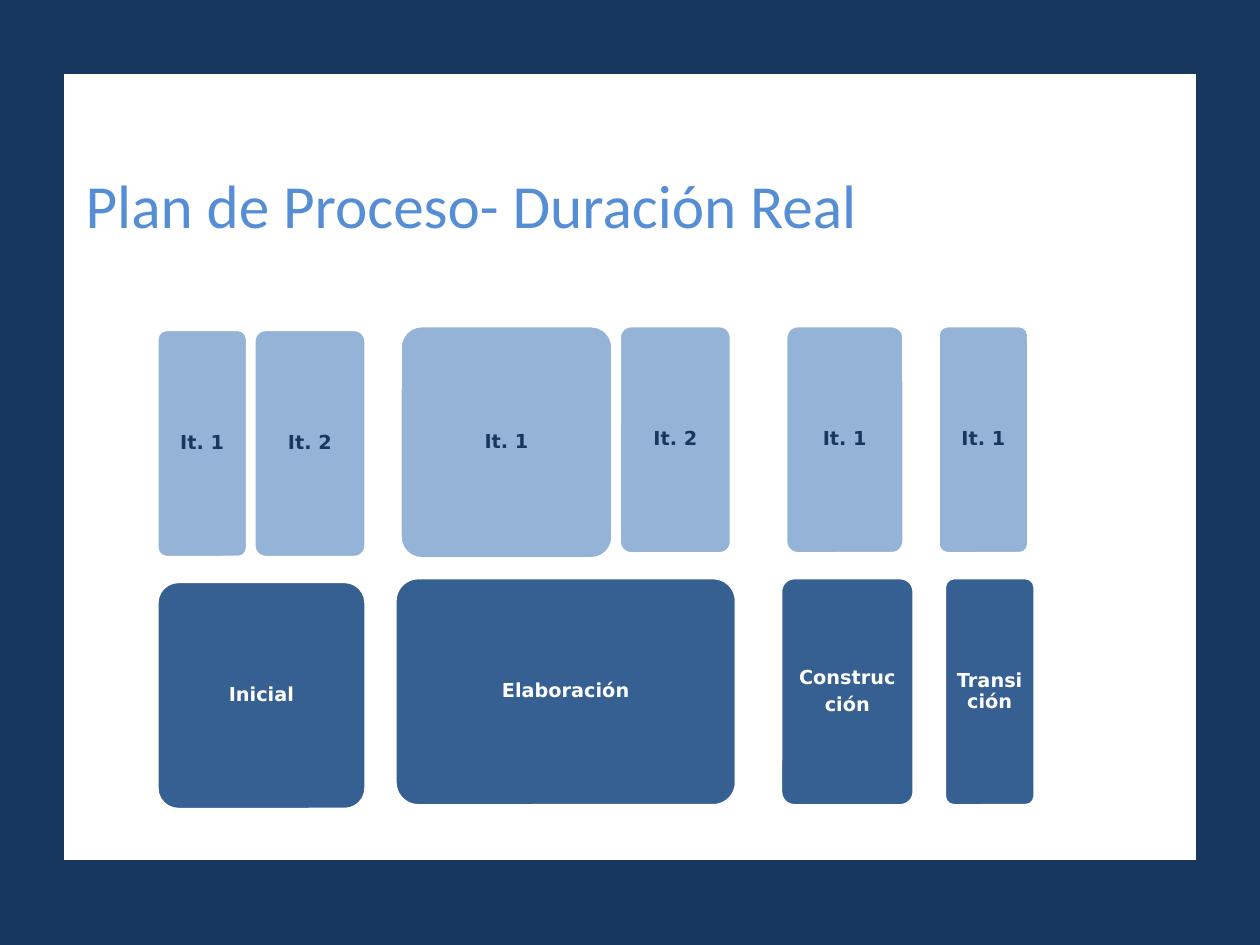
"""Build the slide of process phases and their iterations by real duration."""

from dataclasses import dataclass

import pptx
import pptx.dml.color
import pptx.enum.shapes
import pptx.enum.text
import pptx.util

Inches = pptx.util.Inches
Pt = pptx.util.Pt


@dataclass(frozen=True)
class Theme:
    navy: str = "17375E"
    phase: str = "376092"
    iteration: str = "95B3D7"
    title: str = "558ED5"
    white: str = "FFFFFF"
    title_font: str = "Calibri"
    block_font: str = "DejaVu Sans"
    title_size: float = 35
    block_size: float = 11


@dataclass(frozen=True)
class Block:
    label: str
    left: float
    width: float
    height: float = 1.8


@dataclass(frozen=True)
class Phase:
    block: Block
    iterations: tuple[Block, ...]
    top: float = 2.59


THEME = Theme()
ROW_STEP = 2.0
PHASES = (
    Phase(Block("Inicial", 1.25, 1.65),
          (Block("It. 1", 1.25, 0.71), Block("It. 2", 2.02, 0.88)), top=2.62),
    Phase(Block("Elaboración", 3.14, 2.7),
          (Block("It. 1", 3.18, 1.68, 1.84), Block("It. 2", 4.92, 0.88))),
    Phase(Block("Construc\nción", 6.2, 1.05), (Block("It. 1", 6.24, 0.93),)),
    Phase(Block("Transición", 7.5, 0.71), (Block("It. 1", 7.45, 0.71),)),
)


def rgb(value: str) -> pptx.dml.color.RGBColor:
    return pptx.dml.color.RGBColor.from_string(value)


def add_box(page, kind, left: float, top: float, width: float, height: float,
            *, fill: str, line: str, line_width: float):
    box = page.shapes.add_shape(
        kind, Inches(left), Inches(top), Inches(width), Inches(height))
    box.shadow.inherit = False
    box.fill.solid()
    box.fill.fore_color.rgb = rgb(fill)
    box.line.color.rgb = rgb(line)
    box.line.width = Pt(line_width)
    return box


def write_text(box, text: str, *, font: str, size: float, color: str,
               bold: bool = False, align: str = "CENTER", anchor: str = "MIDDLE",
               left: float = 0.05, top: float = 0.05,
               line_spacing: float = 1.0, space_after: float = 0) -> None:
    frame = box.text_frame
    frame.word_wrap = True
    frame.vertical_anchor = pptx.enum.text.MSO_ANCHOR[anchor]
    frame.margin_left, frame.margin_top = Inches(left), Inches(top)
    frame.margin_right = frame.margin_bottom = Inches(0.05)
    for index, content in enumerate(text.split("\n")):
        para = frame.add_paragraph() if index else frame.paragraphs[0]
        para.alignment = pptx.enum.text.PP_ALIGN[align]
        para.line_spacing = line_spacing
        para.space_after = Pt(space_after)
        span = para.add_run()
        span.text = content
        span.font.name = font
        span.font.size = Pt(size)
        span.font.bold = bold
        span.font.color.rgb = rgb(color)


def draw_block(page, block: Block, top: float, fill: str, color: str) -> None:
    box = add_box(page, pptx.enum.shapes.MSO_SHAPE.ROUNDED_RECTANGLE,
                  block.left, top, block.width, block.height,
                  fill=fill, line=THEME.white, line_width=1.25)
    box.adjustments[0] = 0.1
    write_text(box, block.label, font=THEME.block_font, size=THEME.block_size,
               color=color, bold=True, line_spacing=0.9, space_after=3.85)


def draw_phase(page, phase: Phase) -> None:
    draw_block(page, phase.block, phase.top + ROW_STEP, THEME.phase, THEME.white)
    for iteration in phase.iterations:
        draw_block(page, iteration, phase.top, THEME.iteration, THEME.navy)


def main() -> None:
    deck = pptx.Presentation()
    deck.slide_width, deck.slide_height = Inches(10), Inches(7.5)
    page = deck.slides.add_slide(deck.slide_layouts[6])
    page.background.fill.solid()
    page.background.fill.fore_color.rgb = rgb(THEME.navy)
    panel = add_box(page, pptx.enum.shapes.MSO_SHAPE.RECTANGLE, 0.5, 0.58, 9, 6.25,
                    fill=THEME.white, line=THEME.navy, line_width=0.75)
    write_text(panel, "Plan de Proceso- Duración Real", font=THEME.title_font,
               size=THEME.title_size, color=THEME.title, align="LEFT",
               anchor="TOP", left=0.18, top=0.75)
    for phase in PHASES:
        draw_phase(page, phase)
    deck.save("out.pptx")


if __name__ == "__main__":
    main()
